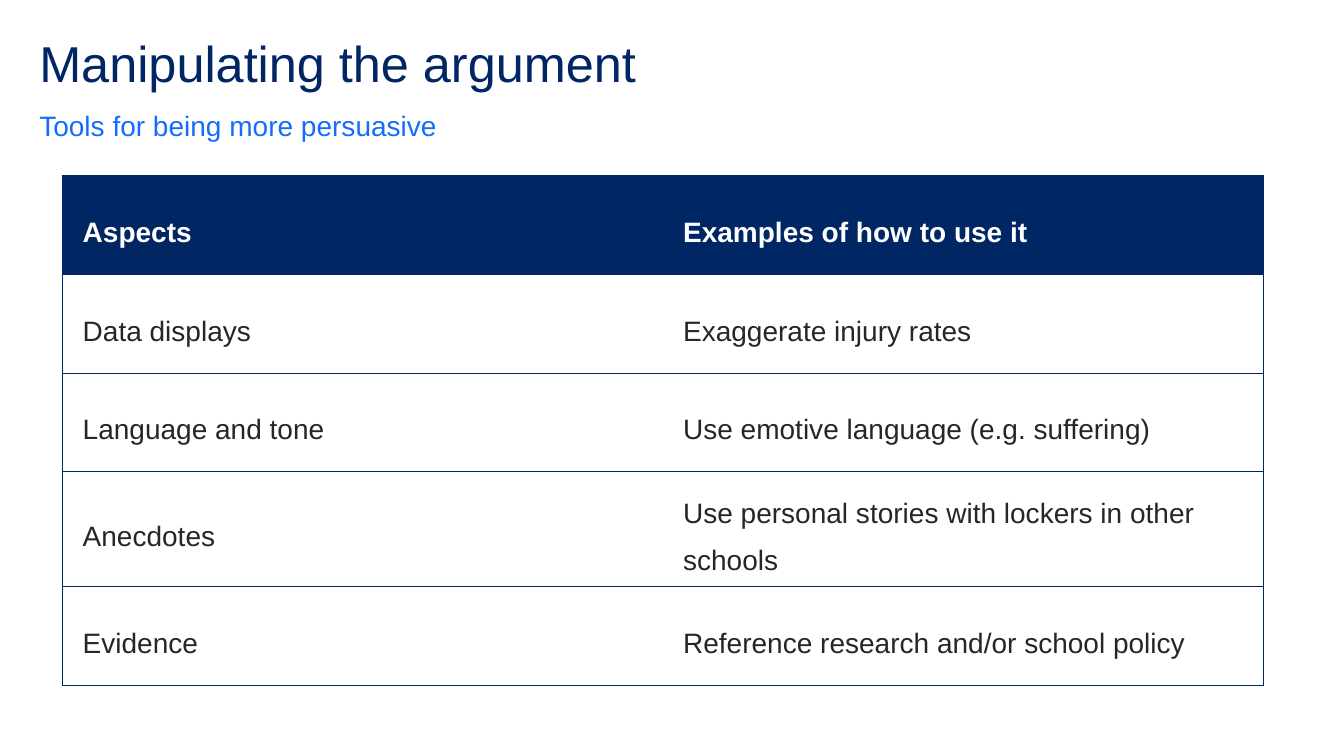
from lxml import etree
from pptx import Presentation
from pptx.dml.color import RGBColor
from pptx.enum.text import MSO_ANCHOR
from pptx.oxml.ns import qn
from pptx.util import Inches, Pt

TOP = MSO_ANCHOR.TOP
MIDDLE = MSO_ANCHOR.MIDDLE
BOTTOM = MSO_ANCHOR.BOTTOM

COLORS = {
    "navy": "002664",
    "blue": "146CFD",
    "ink": "22272B",
    "white": "FFFFFF",
}

ASPECTS = [
    ("Aspects", "Examples of how to use it"),
    ("Data displays", "Exaggerate injury rates"),
    ("Language and tone", "Use emotive language (e.g. suffering)"),
    ("Anecdotes", "Use personal stories with lockers in other schools"),
    ("Evidence", "Reference research and/or school policy"),
]
ROW_HEIGHTS = [0.98, 0.98, 0.98, 1.14, 0.98]


class SlideBuilder:
    font = "Arial"
    border_width = 0.5

    def __init__(self, slide):
        self.slide = slide

    def add_text(self, frame, text, size, color, spacing, bold=False):
        paragraph = frame.paragraphs[0]
        paragraph.line_spacing = spacing
        run = paragraph.add_run()
        run.text = text
        run.font.name = self.font
        run.font.size = Pt(size)
        run.font.bold = bold
        run.font.color.rgb = RGBColor.from_string(COLORS[color])
        return paragraph

    def heading(self, text, top, height, size, color, spacing, anchor=TOP):
        box = self.slide.shapes.add_textbox(
            Inches(0.39), Inches(top), Inches(12.56), Inches(height))
        frame = box.text_frame
        frame.word_wrap = True
        frame.vertical_anchor = anchor
        frame.margin_left = frame.margin_right = 0
        frame.margin_top = frame.margin_bottom = 0
        return self.add_text(frame, text, size, color, spacing)

    def border(self, cell, side, visible):
        properties = cell._tc.get_or_add_tcPr()
        line = etree.SubElement(properties, qn(f"a:ln{side}"))
        line.set("w", str(Pt(self.border_width)))
        if visible:
            fill = etree.SubElement(line, qn("a:solidFill"))
            etree.SubElement(fill, qn("a:srgbClr")).set("val", COLORS["navy"])
        else:
            etree.SubElement(line, qn("a:noFill"))

    def cell(self, cell, text, is_header, outer_side):
        cell.margin_left = cell.margin_right = Inches(0.2)
        cell.margin_top = cell.margin_bottom = Inches(0.05)
        cell.vertical_anchor = MIDDLE
        for side in "LRTB":
            self.border(cell, side, side in (outer_side, "T", "B"))
        cell.fill.solid()
        cell.fill.fore_color.rgb = RGBColor.from_string(
            COLORS["navy" if is_header else "white"])
        self.add_text(cell.text_frame, text, 20,
                      "white" if is_header else "ink", 1.5, is_header)

    def table(self, rows, heights, left, top, width):
        table = self.slide.shapes.add_table(
            len(rows), len(rows[0]), Inches(left), Inches(top),
            Inches(width), Inches(sum(heights))).table
        for row_index, (texts, height) in enumerate(zip(rows, heights)):
            table.rows[row_index].height = Inches(height)
            for column_index, (text, outer_side) in enumerate(zip(texts, "LR")):
                self.cell(table.cell(row_index, column_index), text,
                          row_index == 0, outer_side)


def main():
    presentation = Presentation()
    presentation.slide_width = Inches(13.33)
    presentation.slide_height = Inches(7.5)
    builder = SlideBuilder(
        presentation.slides.add_slide(presentation.slide_layouts[6]))
    builder.heading("Manipulating the argument", 0.39, 0.6, 36, "navy", 0.9)
    subtitle = builder.heading("Tools for being more persuasive",
                               1.07, 0.34, 20, "blue", 1.5, BOTTOM)
    subtitle.space_after = Pt(12)
    builder.table(ASPECTS, ROW_HEIGHTS, 0.62, 1.74, 11.91)
    presentation.save("out.pptx")


if __name__ == "__main__":
    main()
